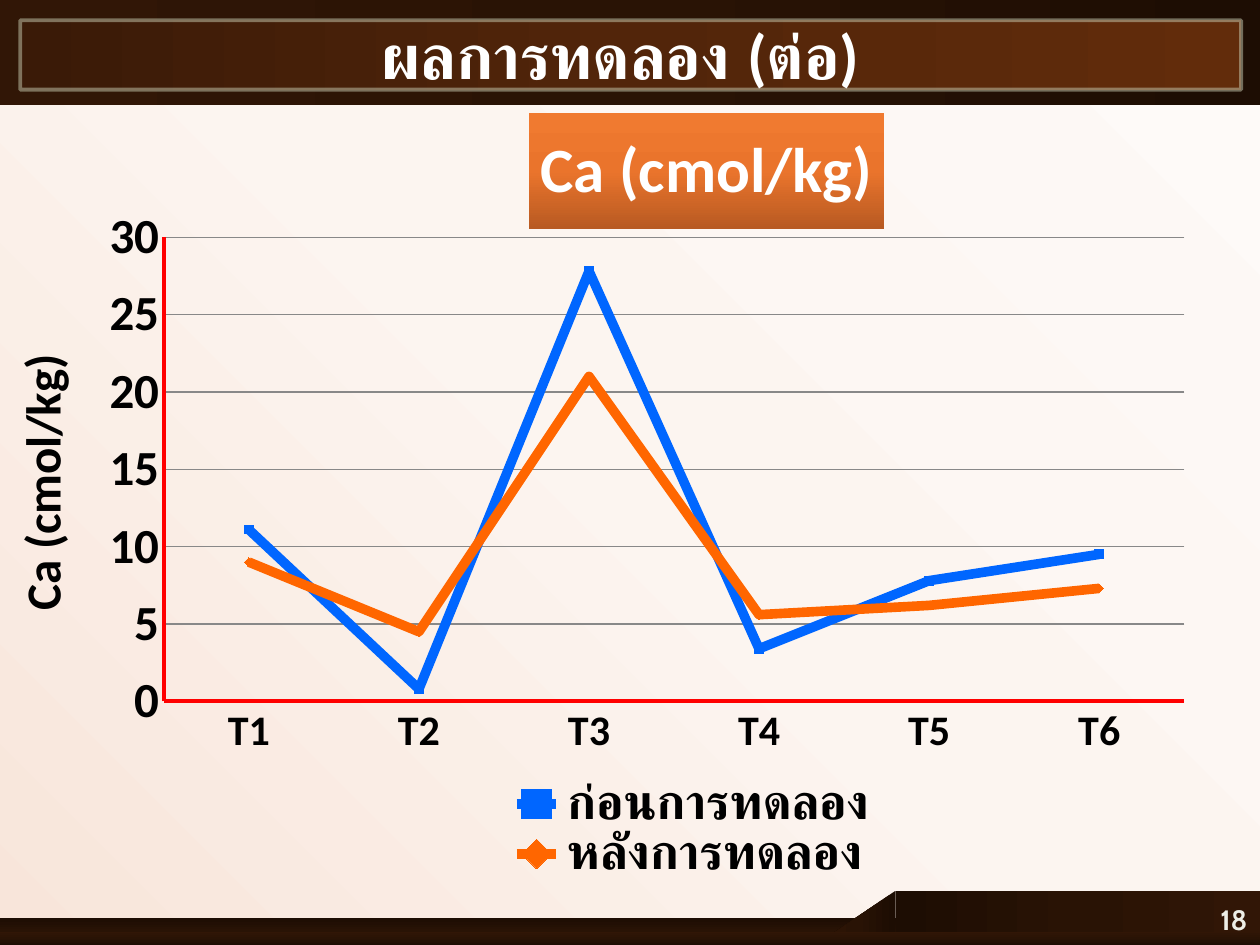
from copy import deepcopy

from lxml import etree
from pptx import Presentation
from pptx.chart.data import CategoryChartData as ChartData
from pptx.dml.color import RGBColor as RGB
from pptx.enum.chart import XL_CHART_TYPE as Kind, XL_LEGEND_POSITION as Side, XL_TICK_MARK as Tick
from pptx.enum.shapes import MSO_SHAPE as Shape
from pptx.enum.text import MSO_ANCHOR as Anchor, PP_ALIGN as Align
from pptx.oxml.ns import qn
from pptx.util import Cm, Pt

WHITE = RGB(0xFF, 0xFF, 0xFF)
BLACK = RGB(0, 0, 0)
RED = RGB(0xFF, 0, 0)
GREY = RGB(0x88, 0x88, 0x88)
PALE = RGB(0xED, 0xEE, 0xE6)
SAGE = RGB(0xC9, 0xCD, 0xB3)
BLUE = RGB(0, 0x66, 0xFF)
ORANGE = RGB(0xFF, 0x66, 0)
CREAM = [RGB(0xFE, 0xFA, 0xF8), RGB(0xFC, 0xF5, 0xF0), RGB(0xF8, 0xE5, 0xDA)]
DARK = [RGB(0x1D, 0x0D, 0x03), RGB(0x29, 0x13, 0x05), RGB(0x31, 0x16, 0x06)]
BROWN = [RGB(0x3A, 0x1A, 0x07), RGB(0x52, 0x25, 0x0A), RGB(0x62, 0x2C, 0x0B)]
COPPER = [RGB(0xF0, 0x7A, 0x30), RGB(0xEA, 0x74, 0x2C), RGB(0xB8, 0x5A, 0x22)]


def blend(fill, node, tones, angle):
    """Give the fill held in node three even stops, at a clockwise angle."""
    fill.gradient()
    fill.gradient_angle = (360 - angle) % 360
    stops = node.xpath(".//a:gsLst")[0]
    stops.insert(1, deepcopy(stops[0]))
    for i, (stop, tone) in enumerate(zip(fill.gradient_stops, tones)):
        stop.color.rgb = tone
        stop.position = i / 2


def place(node, index, **values):
    """Set a manual layout on a chart part, as its child number index."""
    for old in node.findall(qn("c:layout")):
        node.remove(old)
    layout = etree.Element(qn("c:layout"))
    manual = etree.SubElement(layout, qn("c:manualLayout"))
    for tag, value in values.items():
        etree.SubElement(manual, qn("c:" + tag)).set("val", str(value))
    node.insert(index, layout)


prs = Presentation()
prs.slide_width, prs.slide_height = Cm(25.4), Cm(19.05)
slide = prs.slides.add_slide(prs.slide_layouts[6])
blend(slide.background.fill, slide.element, CREAM, 135)

# Header and footer bands
bands = [
    (Shape.RECTANGLE, (0, 18.5, 18.06, 0.56), 0, DARK, 90),
    (Shape.RIGHT_TRIANGLE, (16.71, 17.7, 1.09, 1.6), 270, DARK, 270),
    (Shape.RECTANGLE, (18.06, 17.96, 7.34, 0.97), 0, DARK, 0),
    (Shape.RECTANGLE, (0, 18.78, 25.4, 0.27), 0, DARK, 270),
    (Shape.RECTANGLE, (0, 0, 25.4, 2.11), 0, DARK, 180),
    (Shape.RECTANGLE, (0.41, 0.41, 24.61, 1.4), 0, BROWN, 0),
]
for kind, box, turn, tones, angle in bands:
    band = slide.shapes.add_shape(kind, *map(Cm, box))
    band.shadow.inherit = False
    band.rotation = turn
    band.line.fill.background()
    blend(band.fill, band.element, tones, angle)

# The last band is the title frame
band.line.color.rgb = SAGE
band.line.width = Pt(2.25)
tint = band.element.xpath(".//a:ln//a:srgbClr")[0]
etree.SubElement(tint, qn("a:alpha")).set("val", "50000")

# Title and page number
texts = [
    ("ผลการทดลอง (ต่อ)", (0.3, 0.2, 24.41, 3.33), Anchor.TOP, Align.CENTER,
     dict(name="Calibri", size=Pt(36), bold=True), WHITE),
    ("18", (23.42, 18.03, 1.98, 1.02), Anchor.MIDDLE, Align.RIGHT,
     dict(name="Cabin", size=Pt(16), bold=True), PALE),
]
for text, box, anchor, align, style, tone in texts:
    frame = slide.shapes.add_textbox(*map(Cm, box)).text_frame
    frame.word_wrap = True
    frame.vertical_anchor = anchor
    para = frame.paragraphs[0]
    para.alignment = align
    run = para.add_run()
    run.text = text
    for key, value in style.items():
        setattr(run.font, key, value)
    run.font.color.rgb = tone

# Calcium chart
data = ChartData()
data.categories = ["T1", "T2", "T3", "T4", "T5", "T6"]
data.add_series("ก่อนการทดลอง", [11.1, 0.8, 27.8, 3.4, 7.8, 9.5])
data.add_series("หลังการทดลอง", [9, 4.5, 21, 5.6, 6.2, 7.3])
box = map(Cm, (0, 2.13, 25.4, 15.6))
chart = slide.shapes.add_chart(Kind.LINE_MARKERS, *box, data).chart

chart.has_title = chart.has_legend = True
chart.legend.position = Side.RIGHT
chart.legend.include_in_layout = False
cats, vals = chart.category_axis, chart.value_axis
chart.chart_title.text_frame.text = "Ca (cmol/kg)"
vals.axis_title.text_frame.text = "Ca (cmol/kg)"
turn = vals.axis_title.text_frame._txBody.bodyPr
turn.set("rot", "-5400000")
turn.set("vert", "horz")

fonts = [
    (chart.font, 18, False, BLACK),
    (cats.tick_labels.font, 24, True, BLACK),
    (vals.tick_labels.font, 28, True, BLACK),
    (chart.legend.font, 28, True, BLACK),
    (vals.axis_title.text_frame.paragraphs[0].runs[0].font, 28, True, BLACK),
    (chart.chart_title.text_frame.paragraphs[0].runs[0].font, 36, True, WHITE),
]
for font, size, bold, tone in fonts:
    for key, value in dict(name="Calibri", size=Pt(size), bold=bold).items():
        setattr(font, key, value)
    font.color.rgb = tone

for axis in (cats, vals):
    axis.major_tick_mark = axis.minor_tick_mark = Tick.NONE
    axis.format.line.color.rgb = RED
    axis.format.line.width = Pt(2.25)
for key, value in dict(minimum_scale=0, maximum_scale=30, major_unit=5).items():
    setattr(vals, key, value)
vals.major_gridlines.format.line.color.rgb = GREY
vals.major_gridlines.format.line.width = Pt(0.75)

chart.plots[0].vary_by_categories = False
for series, tone in zip(chart.plots[0].series, (BLUE, ORANGE)):
    series.smooth = False
    series.format.line.color.rgb = tone
    series.format.line.width = Pt(5.5)
    series.marker.size = 5
    series.marker.format.fill.solid()
    series.marker.format.fill.fore_color.rgb = tone
    series.marker.format.line.color.rgb = tone

root = chart.element if hasattr(chart, "element") else chart._chartSpace
head = root.xpath("c:chart/c:title")[0]
blend(chart.chart_title.format.fill, head, COPPER, 90)
place(head, 1, xMode="edge", yMode="edge", x=0.42, y=0.01)
place(root.xpath("c:chart/c:legend")[0], 1,
      xMode="edge", yMode="edge", x=0.39, y=0.87, w=0.32, h=0.13)
place(root.xpath("c:chart/c:plotArea")[0], 0, layoutTarget="inner",
      xMode="edge", yMode="edge", x=0.13, y=0.17, w=0.81, h=0.6)

prs.save("out.pptx")
